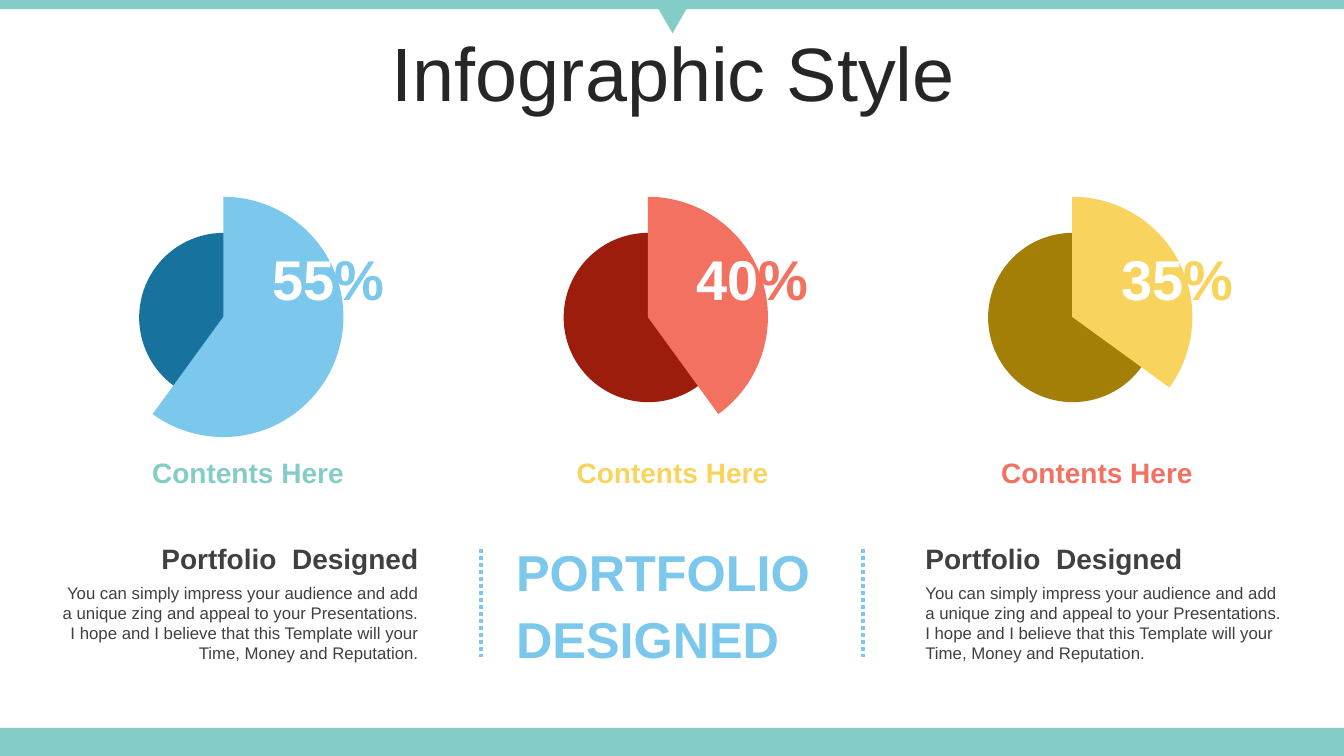
import pptx
import pptx.chart.data
import pptx.dml.color
import pptx.enum.chart
import pptx.enum.dml
import pptx.enum.shapes
import pptx.enum.text
import pptx.oxml
import pptx.oxml.ns
import pptx.util
from pptx.util import Inches

COLORS = {
    "teal": "84CCC6", "sky": "7CC8EC", "navy": "17729D", "coral": "F27161",
    "maroon": "9D1D0D", "yellow": "F8D45E", "olive": "A47F07",
    "title": "262626", "text": "404040", "white": "FFFFFF", "black": "000000",
}
FONT = "Arial"
COLUMN_PITCH = 4.21
# percent label, pie values, slice colour, disc colour, caption colour
PIES = [
    ("55", (60, 40), "sky", "navy", "teal"),
    ("40", (40, 60), "coral", "maroon", "yellow"),
    ("35", (35, 65), "yellow", "olive", "coral"),
]
HEADING = "Portfolio  Designed"
BODY = ("You can simply impress your audience and add a unique zing and appeal "
        "to your Presentations. I hope and I believe that this Template will "
        "your Time, Money and Reputation.")
SHAPES = pptx.enum.shapes.MSO_SHAPE
ALIGN = pptx.enum.text.PP_ALIGN
ANCHOR = pptx.enum.text.MSO_ANCHOR


def rgb(name):
    return pptx.dml.color.RGBColor.from_string(COLORS[name])


def format_font(font, size, color, bold=False):
    font.name = FONT
    font.size = pptx.util.Pt(size)
    font.bold = bold
    font.color.rgb = rgb(color)


def add_filled_shape(slide, kind, left, top, width, height, color):
    shape = slide.shapes.add_shape(
        kind, Inches(left), Inches(top), Inches(width), Inches(height))
    shape.shadow.inherit = False
    shape.fill.solid()
    shape.fill.fore_color.rgb = rgb(color)
    shape.line.fill.background()
    return shape


def add_text(slide, box, runs, size, bold=False, align=ALIGN.CENTER,
             anchor=ANCHOR.MIDDLE, line_spacing=1.0, space_before=0):
    """Add a one-paragraph text box; runs are (text, colour) pairs."""
    shape = slide.shapes.add_textbox(*map(Inches, box))
    frame = shape.text_frame
    frame.word_wrap = True
    frame.vertical_anchor = anchor
    paragraph = frame.paragraphs[0]
    paragraph.alignment = align
    paragraph.line_spacing = line_spacing
    paragraph.space_before = pptx.util.Pt(space_before)
    for text, color in runs:
        run = paragraph.add_run()
        run.text = text
        format_font(run.font, size, color, bold)


def set_plot_layout(chart, x, y, width, height):
    """Fix the inner plot area, in fractions of the chart frame."""
    layout = pptx.oxml.parse_xml(
        f'<c:layout {pptx.oxml.ns.nsdecls("c")}><c:manualLayout>'
        '<c:layoutTarget val="inner"/><c:xMode val="edge"/><c:yMode val="edge"/>'
        f'<c:x val="{x}"/><c:y val="{y}"/><c:w val="{width}"/><c:h val="{height}"/>'
        '</c:manualLayout></c:layout>')
    plot_area = chart.plots[0]._element.getparent()
    for old_layout in plot_area.findall(pptx.oxml.ns.qn("c:layout")):
        plot_area.remove(old_layout)
    plot_area.insert(0, layout)


def add_pie(slide, left, values, color):
    data = pptx.chart.data.CategoryChartData()
    data.categories = ["1", "2"]
    data.add_series("Series 1", values)
    chart = slide.shapes.add_chart(
        pptx.enum.chart.XL_CHART_TYPE.PIE, Inches(left), Inches(1.81),
        Inches(2.71), Inches(2.67), data).chart
    chart.has_legend = False
    chart.has_title = False
    format_font(chart.font, 18, "black")
    plot = chart.plots[0]
    plot.vary_by_categories = False
    points = plot.series[0].points
    points[0].format.fill.solid()
    points[0].format.fill.fore_color.rgb = rgb(color)
    points[1].format.fill.background()
    for point in (points[0], points[1]):
        point.format.line.fill.background()
    set_plot_layout(chart, 0.06, 0.05, 0.88, 0.9)


def add_pie_column(slide, left, percent, values, color, disc_color, caption_color):
    add_filled_shape(slide, SHAPES.OVAL, left + 0.52, 2.31, 1.68, 1.68, disc_color)
    add_pie(slide, left, values, color)
    add_text(slide, (left + 1.6, 2.37, 1.59, 0.77),
             [(percent, "white"), ("%", color)], 40, bold=True)
    add_text(slide, (left + 0.5, 4.47, 2.2, 0.44),
             [("Contents Here", caption_color)], 20, bold=True)


def add_description(slide, left, align):
    add_text(slide, (left, 5.33, 3.74, 0.39), [(HEADING, "text")], 20, bold=True,
             align=align, line_spacing=1.1, space_before=4)
    add_text(slide, (left, 5.73, 3.74, 0.91), [(BODY, "text")], 12,
             align=align, anchor=ANCHOR.TOP)


def add_dotted_divider(slide, x):
    connector = slide.shapes.add_connector(
        pptx.enum.shapes.MSO_CONNECTOR.STRAIGHT,
        Inches(x), Inches(5.45), Inches(x), Inches(6.52))
    connector.line.color.rgb = rgb("sky")
    connector.line.width = pptx.util.Pt(2.5)
    connector.line.dash_style = pptx.enum.dml.MSO_LINE.ROUND_DOT
    connector._element.spPr.append(pptx.oxml.parse_xml(
        f'<a:effectLst {pptx.oxml.ns.nsdecls("a")}/>'))


def set_title(slide, text):
    title = slide.shapes.title
    title.left, title.top = Inches(0.35), Inches(0.37)
    title.width, title.height = Inches(12.66), Inches(0.79)
    frame = title.text_frame
    frame.text = text
    frame.auto_size = pptx.enum.text.MSO_AUTO_SIZE.NONE
    frame.vertical_anchor = ANCHOR.MIDDLE
    paragraph = frame.paragraphs[0]
    paragraph.alignment = ALIGN.CENTER
    paragraph.line_spacing = 0.9
    paragraph.space_before = pptx.util.Pt(10)
    format_font(paragraph.runs[0].font, 54, "title")


def add_frame(slide):
    """Add the bands at the top and bottom and the pointer above the title."""
    add_filled_shape(slide, SHAPES.RECTANGLE, 0, 7.22, 13.33, 0.28, "teal")
    add_filled_shape(slide, SHAPES.RECTANGLE, 0, 0, 13.33, 0.09, "teal")
    pointer = add_filled_shape(
        slide, SHAPES.ISOSCELES_TRIANGLE, 6.48, 0, 0.38, 0.33, "teal")
    pointer.rotation = 180


def main():
    presentation = pptx.Presentation()
    presentation.slide_width = Inches(13.33)
    presentation.slide_height = Inches(7.5)
    slide = presentation.slides.add_slide(presentation.slide_layouts[5])
    add_frame(slide)
    set_title(slide, "Infographic Style")
    for column, pie in enumerate(PIES):
        add_pie_column(slide, 0.86 + column * COLUMN_PITCH, *pie)
    add_description(slide, 0.51, ALIGN.RIGHT)
    add_text(slide, (5.02, 5.26, 3.29, 1.38), [("PORTFOLIO DESIGNED", "sky")], 36,
             bold=True, align=ALIGN.JUSTIFY, anchor=ANCHOR.TOP, line_spacing=1.1)
    add_description(slide, 9.08, ALIGN.LEFT)
    for x in (4.77, 8.56):
        add_dotted_divider(slide, x)
    presentation.save("out.pptx")


if __name__ == "__main__":
    main()
